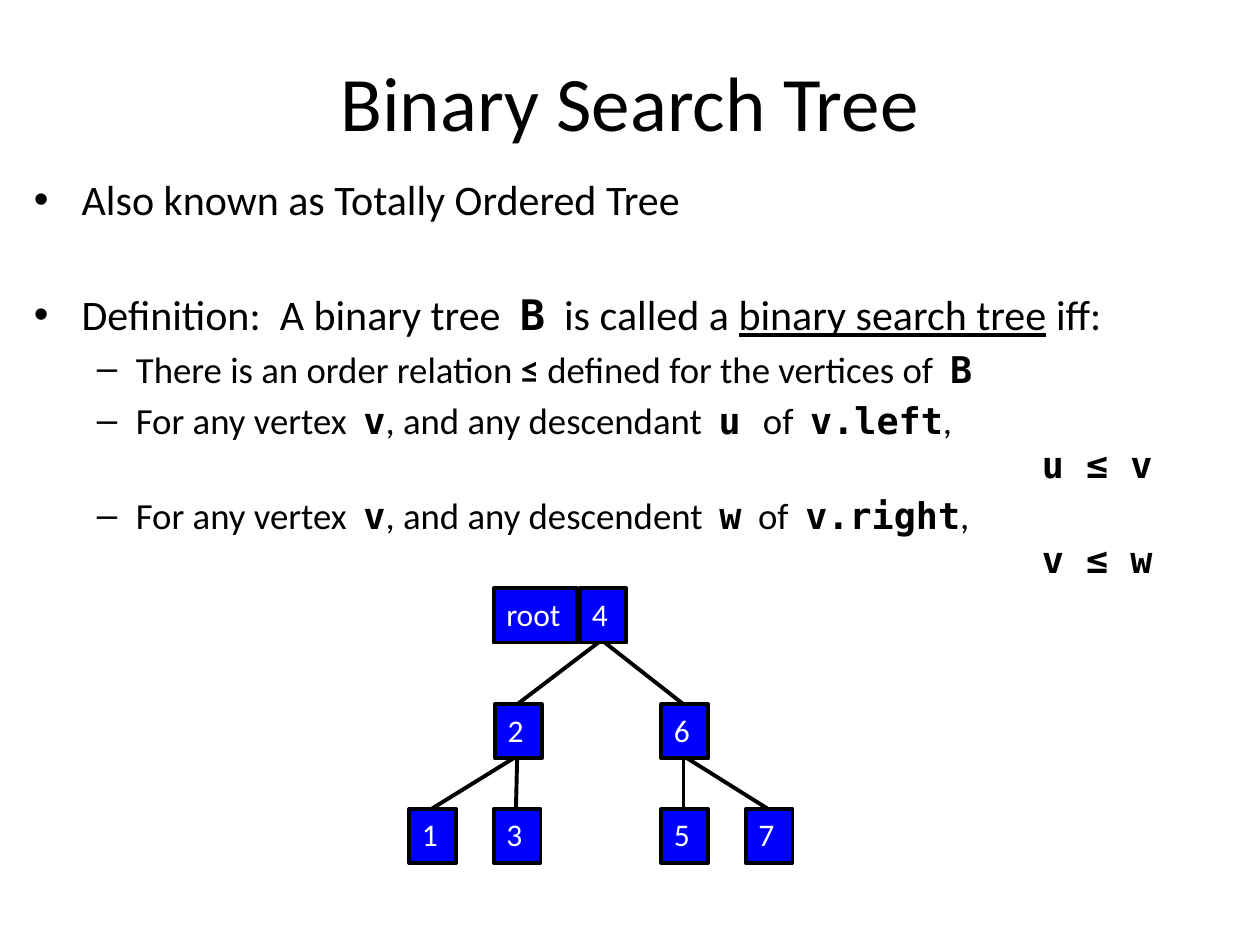
from lxml import etree
from pptx import Presentation
from pptx.dml.color import RGBColor
from pptx.enum.shapes import MSO_CONNECTOR, MSO_SHAPE
from pptx.enum.text import MSO_ANCHOR, MSO_AUTO_SIZE, PP_ALIGN
from pptx.oxml.ns import qn
from pptx.util import Inches, Pt

COLORS = {"text": "000000", "node": "0000FF", "line": "000000", "label": "FFFFFF"}
SANS, MONO = "Calibri", "DejaVu Sans Mono"
NODE_WIDTH, NODE_HEIGHT = 0.37, 0.43

# Paragraph kind: (left margin, first-line indent, bullet, size)
LEVELS = {
    "point": (0.38, -0.38, "•", 24),
    "rule": (0.81, -0.31, "–", 21),
    "formula": (8.0, 0, None, 21),
}

# (kind, space before, [(text, style)])
BODY = [
    ("point", 2, [("Also known as Totally Ordered Tree", "")]),
    ("point", 37, [("Definition:  A binary tree  ", ""), ("B", "code"),
                   ("  is called a ", ""), ("binary search tree", "underline"),
                   (" iff:", "")]),
    ("rule", 4, [("There is an order relation ", ""), ("≤", "bold"),
                 (" defined for the vertices of  ", ""), ("B", "code")]),
    ("rule", 4, [("For any vertex  ", ""), ("v", "code"),
                 (", and any descendant  ", ""), ("u ", "code"), ("of  ", ""),
                 ("v.left", "code"), (",", "")]),
    ("formula", 0, [("u ≤ v", "code")]),
    ("rule", 4, [("For any vertex  ", ""), ("v", "code"),
                 (", and any descendent  ", ""), ("w", "code"), ("  of  ", ""),
                 ("v.right", "code"), (",", "")]),
    ("formula", 0, [("v ≤ w", "code")]),
]

# Label: (left, top)
LEAVES = {"1": (3.25, 6.42), "3": (3.92, 6.42), "5": (5.25, 6.42), "7": (5.92, 6.42)}
PARENTS = {"4": (4.6, 4.67), "2": (3.93, 5.59), "6": (5.25, 5.59)}
CHILDREN = {"4": "26", "2": "13", "6": "57"}


def color(name):
    return RGBColor.from_string(COLORS[name])


def style_font(font, size, color_name, name=SANS):
    font.size = Pt(size)
    font.name = name
    font.color.rgb = color(color_name)


def set_bullet(para, margin, indent, bullet):
    properties = para._p.get_or_add_pPr()
    properties.set("marL", str(Inches(margin)))
    properties.set("indent", str(Inches(indent)))
    if bullet:
        etree.SubElement(properties, qn("a:buFont"), typeface="Arial")
        etree.SubElement(properties, qn("a:buChar"), char=bullet)
    else:
        etree.SubElement(properties, qn("a:buNone"))


def add_text_box(page, left, top, width, height):
    box = page.shapes.add_textbox(Inches(left), Inches(top), Inches(width), Inches(height))
    box.text_frame.word_wrap = True
    return box.text_frame


def add_title(page, text):
    frame = add_text_box(page, 0.5, 0.17, 9, 1.25)
    frame.vertical_anchor = MSO_ANCHOR.MIDDLE
    frame.text = text
    para = frame.paragraphs[0]
    para.alignment = PP_ALIGN.CENTER
    style_font(para.runs[0].font, 44, "text")


def add_body(page):
    frame = add_text_box(page, 0.17, 1.33, 9.58, 4.33)
    for index, (kind, space, spans) in enumerate(BODY):
        para = frame.add_paragraph() if index else frame.paragraphs[0]
        margin, indent, bullet, size = LEVELS[kind]
        para.space_before = Pt(space)
        set_bullet(para, margin, indent, bullet)
        for text, style in spans:
            span = para.add_run()
            span.text = text
            style_font(span.font, size, "text", MONO if style == "code" else SANS)
            span.font.bold = style in ("code", "bold")
            span.font.underline = style == "underline"


def add_node(page, label, left, top, width=NODE_WIDTH):
    node = page.shapes.add_shape(MSO_SHAPE.RECTANGLE, Inches(left), Inches(top),
                                 Inches(width), Inches(NODE_HEIGHT))
    node.shadow.inherit = False
    node.fill.solid()
    node.fill.fore_color.rgb = color("node")
    node.line.color.rgb = color("line")
    node.line.width = Pt(2.25)
    frame = node.text_frame
    frame.text = label
    frame.word_wrap = False
    frame.auto_size = MSO_AUTO_SIZE.SHAPE_TO_FIT_TEXT
    frame.vertical_anchor = MSO_ANCHOR.TOP
    para = frame.paragraphs[0]
    para.alignment = PP_ALIGN.LEFT
    style_font(para.runs[0].font, 18, "label")


def add_edge(page, parent, child):
    """Join the bottom centre of a parent to the top centre of its child."""
    center = NODE_WIDTH / 2 - 0.01
    edge = page.shapes.add_connector(
        MSO_CONNECTOR.STRAIGHT,
        Inches(parent[0] + center), Inches(parent[1] + NODE_HEIGHT - 0.02),
        Inches(child[0] + center), Inches(child[1]))
    edge.line.color.rgb = color("line")
    edge.line.width = Pt(2.25)
    etree.SubElement(edge._element.spPr, qn("a:effectLst"))


def add_tree(page):
    places = {**LEAVES, **PARENTS}
    for label, place in LEAVES.items():
        add_node(page, label, *place)
    for parent, children in CHILDREN.items():
        for child in children:
            add_edge(page, places[parent], places[child])
    for label, place in PARENTS.items():
        add_node(page, label, *place)
    add_node(page, "root", 3.92, 4.67, 0.66)


def main():
    deck = Presentation()
    deck.slide_width, deck.slide_height = Inches(10), Inches(7.5)
    page = deck.slides.add_slide(deck.slide_layouts[6])
    add_title(page, "Binary Search Tree")
    add_body(page)
    add_tree(page)
    deck.save("out.pptx")


if __name__ == "__main__":
    main()
